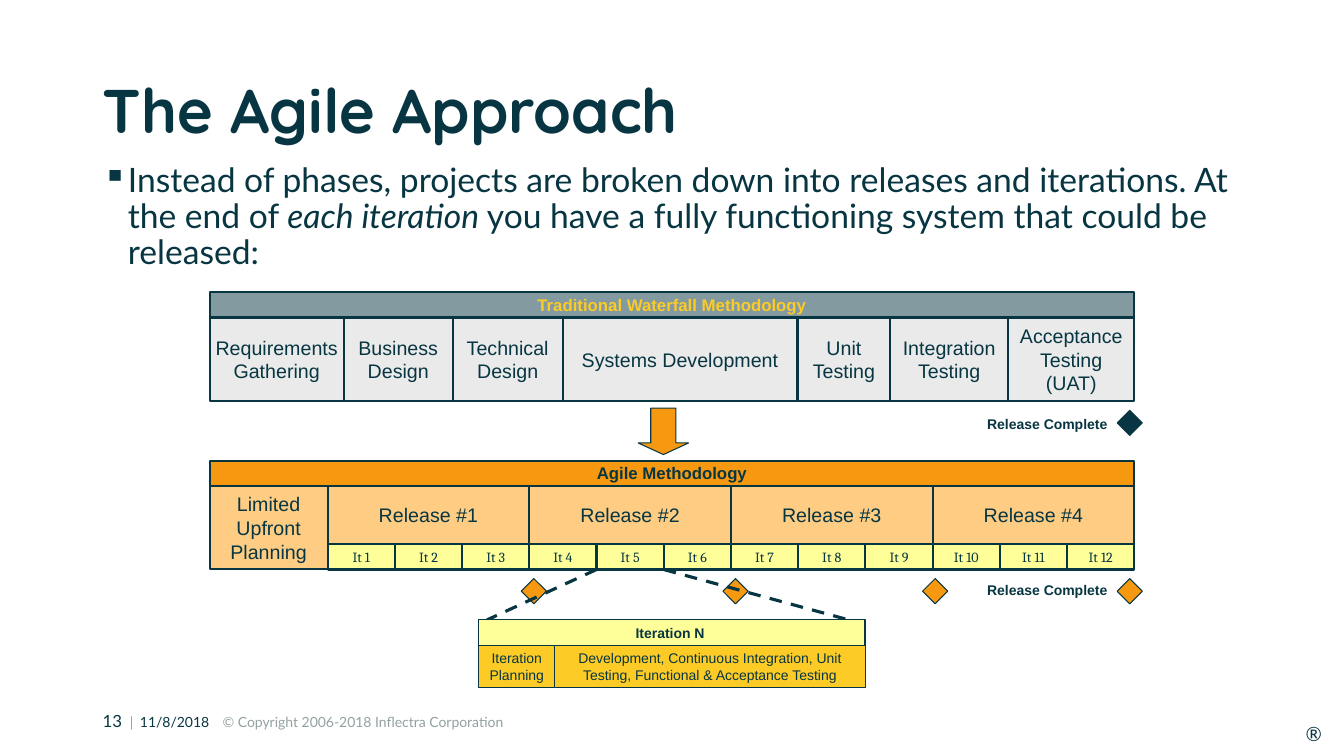
"""Build the slide that compares waterfall phases with agile releases and iterations."""
from dataclasses import dataclass, replace

import lxml.etree
import pptx
import pptx.dml.color
import pptx.enum.dml
import pptx.enum.shapes
import pptx.enum.text
import pptx.oxml
import pptx.oxml.ns
import pptx.util

Inches = pptx.util.Inches
Pt = pptx.util.Pt
Kind = pptx.enum.shapes.MSO_SHAPE
Align = pptx.enum.text.PP_ALIGN
MIDDLE = pptx.enum.text.MSO_ANCHOR.MIDDLE

INK, GREY, ORANGE, PEACH = "073642", "93A1A1", "F79910", "FECC82"
PALE, LEMON, GOLD = "EAEAEA", "FFFF99", "FDCB26"
LEFT, WIDTH, BAR = 2.08, 9.17, 0.25
PHASE_TOP, AGILE_TOP, ITERATION_TOP = 3.15, 4.82, 5.4
PHASE_HEIGHT = 0.83
RELEASE_LEFT, RELEASE_WIDTH, RELEASES, ITERATIONS = 3.25, 2, 4, 3
ITERATION_WIDTH = RELEASE_WIDTH / ITERATIONS
DETAIL_LEFT, DETAIL_TOP, DETAIL_WIDTH = 4.75, 6.15, 3.83


@dataclass(frozen=True)
class Style:
    fill: str
    size: float = 14
    bold: bool = False
    font: str = "Arial"
    colour: str = INK
    line: float = 1.5
    side: float = 0.1
    spacing: float = 1.0
    wrap: bool = True


PHASE = Style(PALE)
RELEASE = Style(PEACH)
AGILE_HEAD = Style(ORANGE, 12, True)
WATERFALL_HEAD = Style(INK, 12, True, colour=GOLD)
ITERATION = Style(LEMON, 10, font="Cambria", side=0)
DETAIL = Style(GOLD, 10, line=0.75, spacing=1.01)
DETAIL_HEAD = replace(DETAIL, fill=LEMON, bold=True, wrap=False)
MARKER = Style(ORANGE, line=0.75)


def paint(target, colour: str) -> None:
    """Give a fill one solid colour."""
    target.solid()
    target.fore_color.rgb = pptx.dml.color.RGBColor.from_string(colour)


def format_font(font, name: str, size: float, colour: str, bold: bool = False) -> None:
    """Set the face, size, colour and weight of a font."""
    font.name, font.size, font.bold = name, Pt(size), bold
    paint(font.fill, colour)


def add_markup(parent, markup: str):
    """Append one drawing element written as XML and return it."""
    space = pptx.oxml.ns.nsdecls("a")
    tag, rest = markup.split(" ", 1)
    element = pptx.oxml.parse_xml(f"{tag} {space} {rest}")
    parent.append(element)
    return element


def add_figure(page, kind, left: float, top: float, width: float, height: float, style: Style):
    """Add a filled and outlined preset shape."""
    figure = page.shapes.add_shape(kind, Inches(left), Inches(top), Inches(width), Inches(height))
    figure.shadow.inherit = False
    paint(figure.fill, style.fill)
    paint(figure.line.fill, INK)
    figure.line.width = Pt(style.line)
    return figure


def add_cell(page, left: float, top: float, width: float, height: float, text: str, style: Style):
    """Add a rectangle with centred text."""
    cell = add_figure(page, Kind.RECTANGLE, left, top, width, height, style)
    frame = cell.text_frame
    frame.text = text
    frame.word_wrap = style.wrap
    frame.vertical_anchor = MIDDLE
    frame.margin_left = frame.margin_right = Inches(style.side)
    for para in frame.paragraphs:
        para.alignment = Align.CENTER
        para.line_spacing = style.spacing
        for span in para.runs:
            format_font(span.font, style.font, style.size, style.colour, style.bold)
    return cell


def add_box(page, left: float, top: float, width: float, height: float, wrap: bool = True):
    """Add a text box and return its frame."""
    box = page.shapes.add_textbox(Inches(left), Inches(top), Inches(width), Inches(height))
    box.text_frame.word_wrap = wrap
    return box.text_frame


def add_marker(page, left: float, top: float, colour: str = ORANGE) -> None:
    """Add a release diamond."""
    add_figure(page, Kind.DIAMOND, left, top, BAR, BAR, replace(MARKER, fill=colour))


def add_release_label(page, top: float) -> None:
    """Add the label beside the last release diamond."""
    para = add_box(page, 9.69, top, 1.39, 0.27, wrap=False).paragraphs[0]
    para.text = "Release Complete"
    para.alignment = Align.RIGHT
    para.line_spacing = 1.01
    format_font(para.runs[0].font, "Arial", 10, INK, True)


def add_dash(page, start: float, end: float) -> None:
    """Add a dashed line from the iteration row to the detail box."""
    dash = page.shapes.add_connector(
        pptx.enum.shapes.MSO_CONNECTOR.STRAIGHT,
        Inches(start), Inches(ITERATION_TOP + BAR), Inches(end), Inches(DETAIL_TOP))
    paint(dash.line.fill, INK)
    dash.line.width = Pt(2.25)
    dash.line.dash_style = pptx.enum.dml.MSO_LINE.DASH
    lxml.etree.SubElement(dash.element.spPr, pptx.oxml.ns.qn("a:effectLst"))


def add_heading(page) -> None:
    """Fill the title and add the bulleted statement."""
    title = page.shapes.title
    title.left, title.top, title.width, title.height = map(Inches, (0.92, 0.4, 11.5, 1.45))
    title.text_frame.text = "The Agile Approach"
    title.text_frame.vertical_anchor = MIDDLE
    para = title.text_frame.paragraphs[0]
    para.alignment = Align.LEFT
    para.line_spacing = 0.9
    format_font(para.runs[0].font, "Quicksand", 44, INK, True)

    para = add_box(page, 0.92, 1.57, 11.5, 1.2).paragraphs[0]
    properties = para._p.get_or_add_pPr()
    properties.set("marL", str(Inches(0.25)))
    properties.set("indent", str(Inches(-0.25)))
    add_markup(properties, '<a:buChar char="▪"/>')
    para.line_spacing = 0.9
    for text, italic in (
            ("Instead of phases, projects are broken down into releases and iterations. "
             "At the end of ", False),
            ("each iteration", True),
            (" you have a fully functioning system that could be released:", False)):
        span = para.add_run()
        span.text = text
        format_font(span.font, "Lato", 24, INK)
        span.font.italic = italic


def add_footer(page) -> None:
    """Add the page number, date, copyright line and corner mark."""
    para = add_box(page, 0.92, 7, 7.47, 0.3).paragraphs[0]
    stops = add_markup(para._p.get_or_add_pPr(), "<a:tabLst />")
    for stop in (0.27, 0.37, 1.19):
        add_markup(stops, f'<a:tab pos="{Inches(stop)}" algn="l"/>')
    for text, size, colour in (("13", 12, INK), ("\t|\t", 10, GREY), ("11/8/2018", 10, INK),
                               ("\t© Copyright 2006-2018 Inflectra Corporation", 10, GREY)):
        span = para.add_run()
        span.text = text
        format_font(span.font, "Lato", size, colour)

    frame = add_box(page, 12.95, 7.16, 0.18, 0.24, wrap=False)
    frame.margin_left = frame.margin_right = frame.margin_top = frame.margin_bottom = 0
    frame.text = "®"
    format_font(frame.paragraphs[0].runs[0].font, "Lato", 14, INK)


def add_waterfall(page) -> None:
    """Add the row of waterfall phases and its release mark."""
    left = LEFT
    for text, width in (("Requirements\nGathering", 1.33), ("Business Design", 1.08),
                        ("Technical Design", 1.09), ("Systems Development", 2.33),
                        ("Unit\nTesting", 0.92), ("Integration\nTesting", 1.17),
                        ("Acceptance\nTesting (UAT)", 1.25)):
        style = replace(PHASE, wrap=not text.startswith("Requirements"))
        add_cell(page, left, PHASE_TOP, width, PHASE_HEIGHT, text, style)
        left += width
    head = add_cell(page, LEFT, PHASE_TOP - BAR, WIDTH, BAR,
                    "Traditional Waterfall Methodology", WATERFALL_HEAD)
    colour = head.element.spPr.find(pptx.oxml.ns.qn("a:solidFill"))[0]
    add_markup(colour, '<a:alpha val="50000"/>')
    add_marker(page, 11.08, 4.07, INK)
    add_release_label(page, 4.07)
    arrow = add_figure(page, Kind.DOWN_ARROW, 6.33, 4.05, 0.5, 0.46, MARKER)
    arrow.adjustments[0], arrow.adjustments[1] = 0.5, 0.25


def add_agile(page) -> None:
    """Add the releases, their iterations and the detail of one iteration."""
    add_cell(page, LEFT, AGILE_TOP, RELEASE_LEFT - LEFT, PHASE_HEIGHT,
             "Limited Upfront Planning", RELEASE)
    for index in range(RELEASES):
        add_cell(page, RELEASE_LEFT + index * RELEASE_WIDTH, AGILE_TOP, RELEASE_WIDTH,
                 ITERATION_TOP - AGILE_TOP, f"Release #{index + 1}", RELEASE)
    for index in range(RELEASES * ITERATIONS):
        add_cell(page, RELEASE_LEFT + index * ITERATION_WIDTH, ITERATION_TOP, ITERATION_WIDTH,
                 BAR, f"It {index + 1}", ITERATION)
    add_cell(page, LEFT, AGILE_TOP - BAR, WIDTH, BAR, "Agile Methodology", AGILE_HEAD)
    for left in (5.17, 7.17, 9.15, 11.08):
        add_marker(page, left, 5.74)
    add_release_label(page, 5.72)
    for column, end in ((4, 4.83), (5, 8.42)):
        add_dash(page, RELEASE_LEFT + column * ITERATION_WIDTH, end)
    add_cell(page, DETAIL_LEFT, DETAIL_TOP, DETAIL_WIDTH, BAR, "Iteration N ", DETAIL_HEAD)
    add_cell(page, DETAIL_LEFT, DETAIL_TOP + BAR, 0.75, 0.42, "Iteration Planning", DETAIL)
    add_cell(page, DETAIL_LEFT + 0.75, DETAIL_TOP + BAR, DETAIL_WIDTH - 0.75, 0.42,
             "Development, Continuous Integration, Unit Testing, "
             "Functional & Acceptance Testing", DETAIL)


def main() -> None:
    """Build and save the deck."""
    deck = pptx.Presentation()
    deck.slide_width, deck.slide_height = Inches(13.33), Inches(7.5)
    page = deck.slides.add_slide(deck.slide_layouts[5])
    add_heading(page)
    add_waterfall(page)
    add_agile(page)
    add_footer(page)
    deck.save("out.pptx")


if __name__ == "__main__":
    main()
